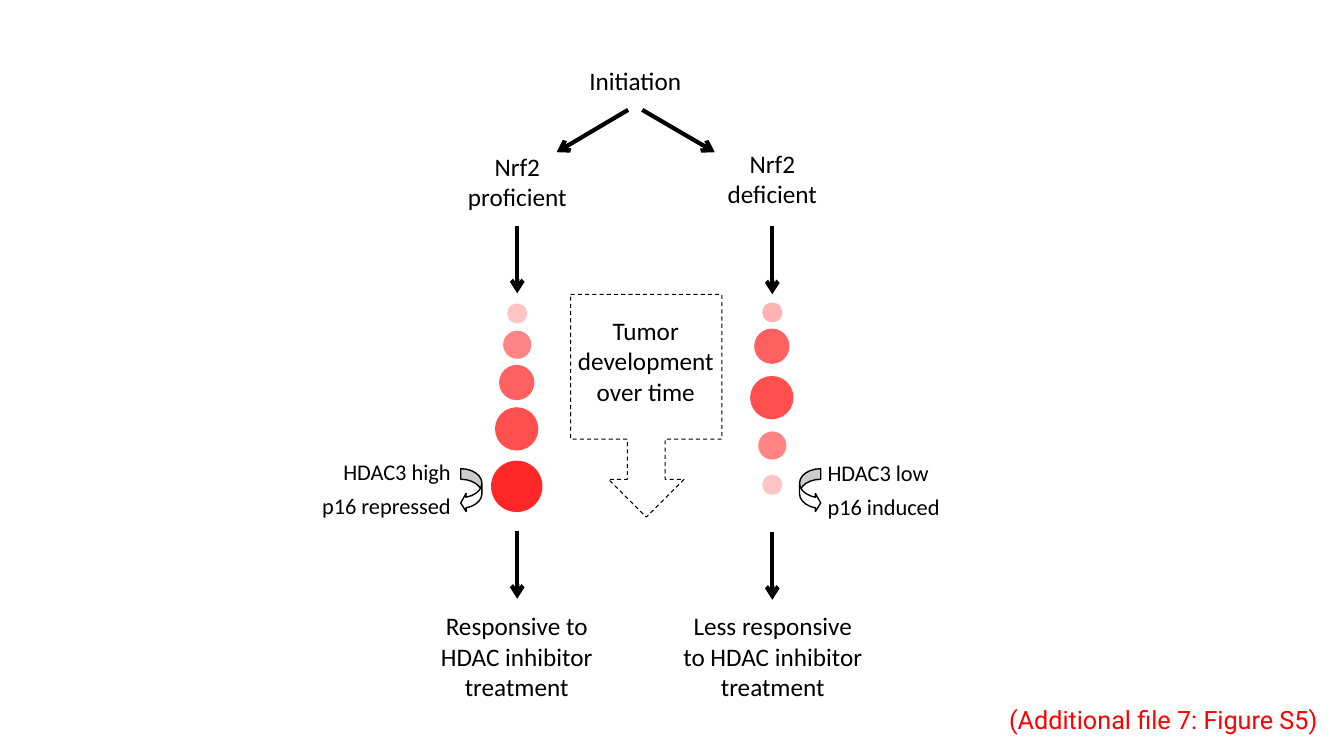
from dataclasses import dataclass

from lxml import etree
from pptx import Presentation
from pptx.dml.color import RGBColor
from pptx.enum.dml import MSO_LINE
from pptx.enum.shapes import MSO_CONNECTOR, MSO_SHAPE
from pptx.enum.text import MSO_AUTO_SIZE, PP_ALIGN
from pptx.oxml.ns import qn
from pptx.util import Emu, Pt

LEFT, CENTER, RIGHT = PP_ALIGN.LEFT, PP_ALIGN.CENTER, PP_ALIGN.RIGHT
OVAL = MSO_SHAPE.OVAL
CALLOUT = MSO_SHAPE.DOWN_ARROW_CALLOUT
CURVED_ARROW = MSO_SHAPE.CURVED_RIGHT_ARROW
STRAIGHT = MSO_CONNECTOR.STRAIGHT
DASH = MSO_LINE.DASH
FIT_TEXT = MSO_AUTO_SIZE.SHAPE_TO_FIT_TEXT

EMU_PER_PX = 9144  # 100 px to the inch
BLANK_LAYOUT = 6


@dataclass(frozen=True)
class Theme:
    ink: str = "000000"
    paper: str = "FFFFFF"
    reference: str = "FF0000"
    font: str = "Calibri"
    reference_font: str = "Roboto"
    stage_size: int = 18
    marker_size: int = 16
    flow_line: float = 3
    marker_line: float = 1
    callout_line: float = 0.75


THEME = Theme()

# Tumour circles by column centre: top, diameter, colour
PROFICIENT_X, DEFICIENT_X = 513, 766
TUMOURS = {
    PROFICIENT_X: [
        (301, 20, "FFC5C5"),
        (328, 28, "FF8585"),
        (362, 35, "FF6161"),
        (404, 43, "FF4F4F"),
        (457, 51, "FF2121"),
    ],
    DEFICIENT_X: [
        (300, 20, "FFB3B3"),
        (326, 35, "FF6161"),
        (373, 43, "FF4F4F"),
        (428, 28, "FF8585"),
        (471, 20, "FFC5C5"),
    ],
}

# Flow arrows: start x, start y, end x, end y
FLOWS = [
    (623, 109, 552, 151),
    (637, 109, 709, 151),
    (PROFICIENT_X, 224, PROFICIENT_X, 291),
    (DEFICIENT_X, 224, DEFICIENT_X, 292),
    (PROFICIENT_X, 527, PROFICIENT_X, 594),
    (DEFICIENT_X, 528, DEFICIENT_X, 595),
]

# Stage labels: text, left, top, width, height
STAGES = [
    ("Initiation", 559, 60, 142, 40),
    ("Nrf2 proficient", 442, 145, 142, 71),
    ("Nrf2 deficient", 695, 142, 142, 71),
    ("Tumor development over time", 556, 308, 169, 101),
    ("Responsive to HDAC inhibitor treatment", 423, 601, 179, 101),
    ("Less responsive to HDAC inhibitor treatment", 665, 601, 203, 101),
]

# Marker labels: text, left, top, width, alignment
MARKERS = [
    ("HDAC3 high", 327, 450, 130, RIGHT),
    ("p16 repressed", 305, 483, 152, RIGHT),
    ("HDAC3 low", 811, 451, 124, LEFT),
    ("p16 induced", 811, 484, 135, LEFT),
]


def px(*lengths):
    return [Emu(length * EMU_PER_PX) for length in lengths]


def rgb(color):
    return RGBColor.from_string(color)


def add_label(slide, text, box, size, align=CENTER, wrap=True,
              font=THEME.font, color=THEME.ink):
    frame = slide.shapes.add_textbox(*px(*box)).text_frame
    frame.word_wrap = wrap
    frame.auto_size = FIT_TEXT
    frame.text = text
    paragraph = frame.paragraphs[0]
    paragraph.alignment = align
    run_font = paragraph.runs[0].font
    run_font.name = font
    run_font.size = Pt(size)
    run_font.color.rgb = rgb(color)


def add_flow(slide, ends):
    flow = slide.shapes.add_connector(STRAIGHT, *px(*ends))
    flow.line.color.rgb = rgb(THEME.ink)
    flow.line.width = Pt(THEME.flow_line)
    etree.SubElement(flow.line._get_or_add_ln(), qn("a:tailEnd"), type="arrow")
    etree.SubElement(flow._element.spPr, qn("a:effectLst"))


def add_figure(slide, kind, box, fill=None, line_width=None):
    figure = slide.shapes.add_shape(kind, *px(*box))
    figure.shadow.inherit = False
    if fill:
        figure.fill.solid()
        figure.fill.fore_color.rgb = rgb(fill)
    else:
        figure.fill.background()
    if line_width:
        figure.line.color.rgb = rgb(THEME.ink)
        figure.line.width = Pt(line_width)
    else:
        figure.line.fill.background()
    return figure


def add_tumour(slide, center_x, top, diameter, color):
    left = center_x - (diameter + 1) // 2
    return add_figure(slide, OVAL, (left, top, diameter, diameter), color)


def add_switch(slide, left, flipped=False):
    switch = add_figure(slide, CURVED_ARROW, (left, 465, 21, 43),
                        THEME.paper, THEME.marker_line)
    for index, value in enumerate((0.5, 0.855, 0.25)):
        switch.adjustments[index] = value
    if flipped:
        switch._element.spPr.get_or_add_xfrm().set("flipH", "1")


def set_opacity(figure, percent):
    color = figure._element.spPr.find(qn("a:solidFill"))[0]
    etree.SubElement(color, qn("a:alpha"), val=str(percent * 1000))


def main():
    deck = Presentation()
    deck.slide_width, deck.slide_height = px(1333, 750)
    slide = deck.slides.add_slide(deck.slide_layouts[BLANK_LAYOUT])

    # Time axis
    time_callout = add_figure(slide, CALLOUT, (566, 292, 150, 221),
                              line_width=THEME.callout_line)
    time_callout.line.dash_style = DASH

    # Stages and the flow between them
    for text, *box in STAGES:
        add_label(slide, text, box, THEME.stage_size)
    for ends in FLOWS:
        add_flow(slide, ends)

    # Tumour growth in each column
    for center_x, tumours in TUMOURS.items():
        circles = [add_tumour(slide, center_x, *tumour) for tumour in tumours]
        if center_x == PROFICIENT_X:
            set_opacity(circles[-1], 97)

    # Markers and their switches
    for text, left, top, width, align in MARKERS:
        add_label(slide, text, (left, top, width, 37), THEME.marker_size,
                  align, wrap=False)
    add_switch(slide, 457, flipped=True)
    add_switch(slide, 793)

    # Figure reference
    add_label(slide, "(Additional file 7: Figure S5)", (991, 694, 332, 40),
              THEME.stage_size, LEFT, wrap=False,
              font=THEME.reference_font, color=THEME.reference)

    deck.save("out.pptx")


if __name__ == "__main__":
    main()
